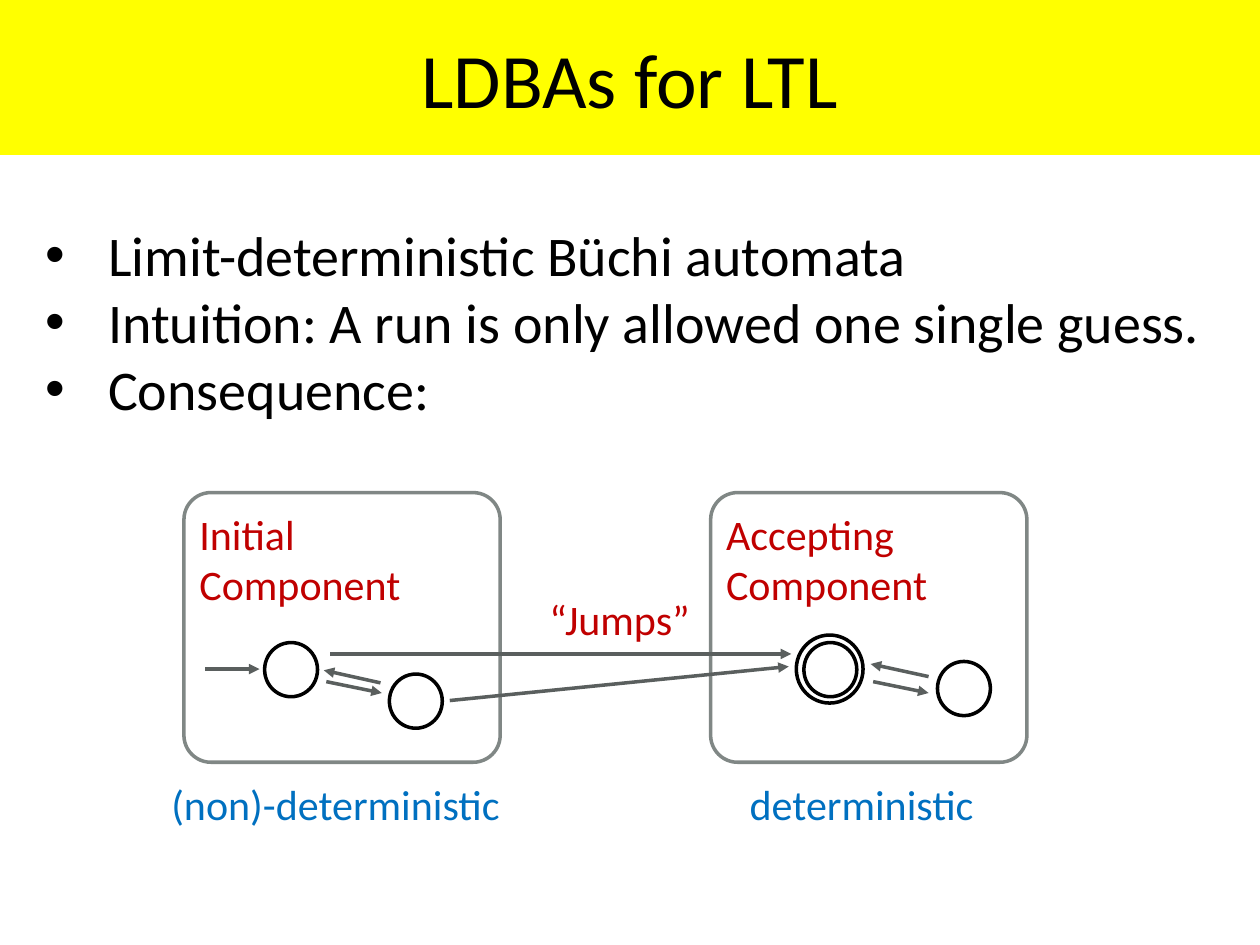
from lxml import etree
from pptx import Presentation
from pptx.dml.color import RGBColor
from pptx.enum import shapes, text
from pptx.oxml import ns
from pptx.util import Inches, Pt

COLORS = {
    "banner": "FFFF00", "black": "000000", "white": "FFFFFF", "frame": "808785",
    "arrow": "5A5F5E", "red": "C00000", "blue": "0070C0",
}
FONT = "Calibri"


def add_block(kind, left, top, width, height, fill=None, line=None):
    """Add a preset shape without shadow; no fill or line unless a colour is named."""
    block = slide.shapes.add_shape(
        kind, Inches(left), Inches(top), Inches(width), Inches(height))
    block.shadow.inherit = False
    if fill:
        block.fill.solid()
        block.fill.fore_color.rgb = RGBColor.from_string(COLORS[fill])
    else:
        block.fill.background()
    if line:
        block.line.color.rgb = RGBColor.from_string(COLORS[line])
        block.line.width = Pt(2)
    else:
        block.line.fill.background()
    return block


def write(box, words, size, color, align, anchor, inset=None):
    """Fill a shape with text, one paragraph per line, in one style."""
    frame = box.text_frame
    frame.text = words
    frame.vertical_anchor = anchor
    if inset is not None:
        frame.margin_left = frame.margin_right = Inches(inset)
        frame.margin_top = frame.margin_bottom = Inches(inset)
    for para in frame.paragraphs:
        para.alignment = align
        for span in para.runs:
            span.font.name = FONT
            span.font.size = Pt(size)
            span.font.color.rgb = RGBColor.from_string(COLORS[color])


deck = Presentation()
deck.slide_width, deck.slide_height = Inches(10), Inches(7.5)
slide = deck.slides.add_slide(deck.slide_layouts[6])
SHAPE, ALIGN, ANCHOR = shapes.MSO_SHAPE, text.PP_ALIGN, text.MSO_ANCHOR

# Title banner
banner = add_block(SHAPE.RECTANGLE, 0, 0, 10, 1.23, fill="banner")
write(banner, "LDBAs for LTL", 44, "black", ALIGN.CENTER, ANCHOR.MIDDLE)

# The two components of the automaton
for left, name in [(1.46, "Initial Component"), (5.64, "Accepting Component")]:
    component = add_block(SHAPE.ROUNDED_RECTANGLE, left, 3.91, 2.51, 2.14, line="frame")
    component.adjustments[0] = 0.1
    write(component, name, 24, "red", ALIGN.LEFT, ANCHOR.TOP, 0.06)

# States; the accepting one has a second ring
add_block(SHAPE.OVAL, 6.32, 5.04, 0.53, 0.54, fill="white", line="black")
for left, top in [(2.1, 5.1), (3.09, 5.35), (6.38, 5.1), (7.44, 5.25)]:
    add_block(SHAPE.OVAL, left, top, 0.42, 0.43, fill="white", line="black")

# Transitions: start x, start y, end x, end y
transitions = [
    (1.63, 5.31, 2.06, 5.31),
    (2.59, 5.41, 3.03, 5.5),
    (3.02, 5.42, 2.57, 5.32),
    (3.57, 5.56, 6.26, 5.29),
    (6.93, 5.41, 7.37, 5.5),
    (7.37, 5.37, 6.91, 5.27),
    (2.62, 5.19, 6.28, 5.19),
]
for ends in transitions:
    arrow = slide.shapes.add_connector(
        shapes.MSO_CONNECTOR.STRAIGHT, *[Inches(value) for value in ends])
    arrow.line.color.rgb = RGBColor.from_string(COLORS["arrow"])
    arrow.line.width = Pt(2)
    etree.SubElement(arrow.line._get_or_add_ln(), ns.qn("a:tailEnd"), type="triangle")
    etree.SubElement(arrow._element.spPr, ns.qn("a:effectLst"))

# Labels around the components
labels = [
    ("(non)-deterministic", 1.3, 6.12, 2.73, "blue"),
    ("deterministic", 5.89, 6.12, 1.91, "blue"),
    ("“Jumps”", 4.3, 4.65, 1.24, "red"),
]
for words, left, top, width, color in labels:
    label = slide.shapes.add_textbox(Inches(left), Inches(top), Inches(width), Inches(0.52))
    label.text_frame.word_wrap = False
    write(label, words, 24, color, ALIGN.LEFT, ANCHOR.MIDDLE, 0.06)

# Bullet list
points = [
    "Limit-deterministic Büchi automata",
    "Intuition: A run is only allowed one single guess.",
    "Consequence:",
]
body = slide.shapes.add_textbox(Inches(0.26), Inches(1.7), Inches(9.46), Inches(1.72))
body.text_frame.word_wrap = True
write(body, "\n".join(points), 32, "black", ALIGN.LEFT, ANCHOR.TOP)
for para in body.text_frame.paragraphs:
    props = para._p.get_or_add_pPr()
    props.set("marL", str(Inches(0.5)))
    props.set("indent", str(Inches(-0.5)))
    etree.SubElement(props, ns.qn("a:buFont"), typeface="Arial")
    etree.SubElement(props, ns.qn("a:buChar"), char="•")

deck.save("out.pptx")
